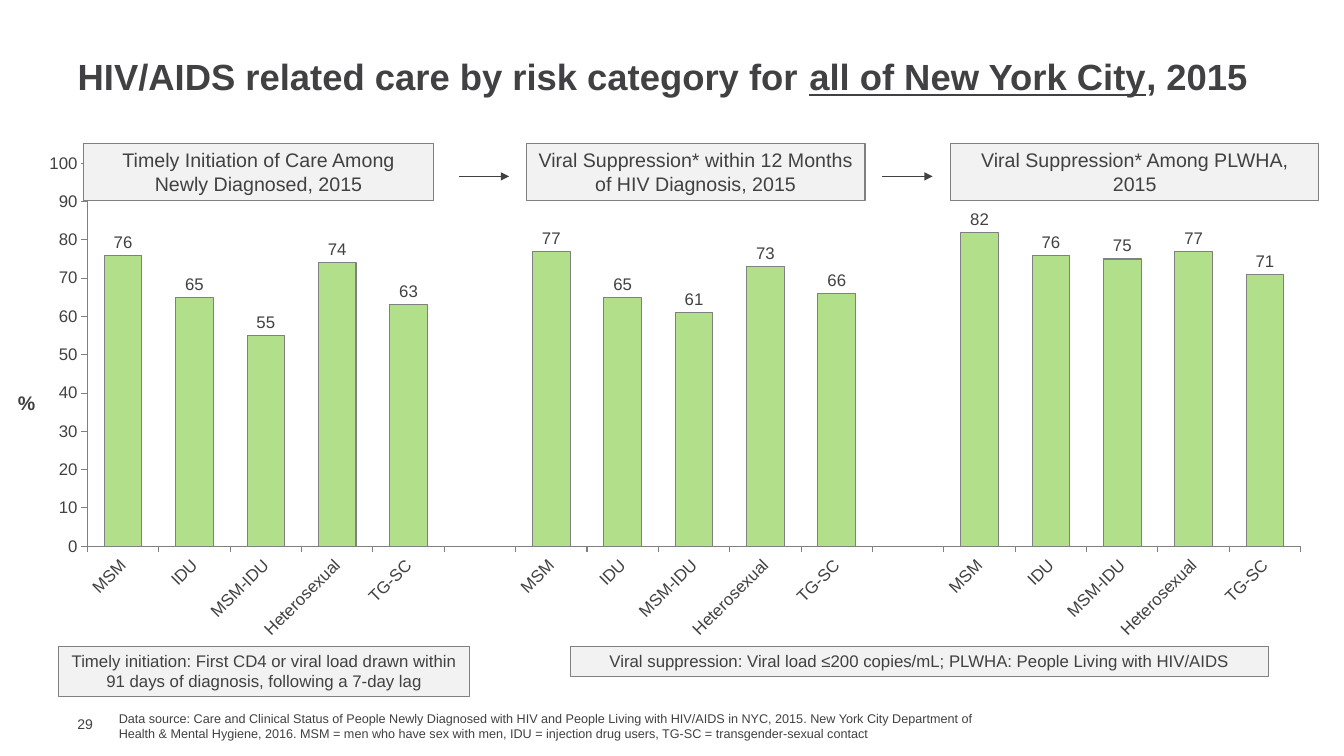
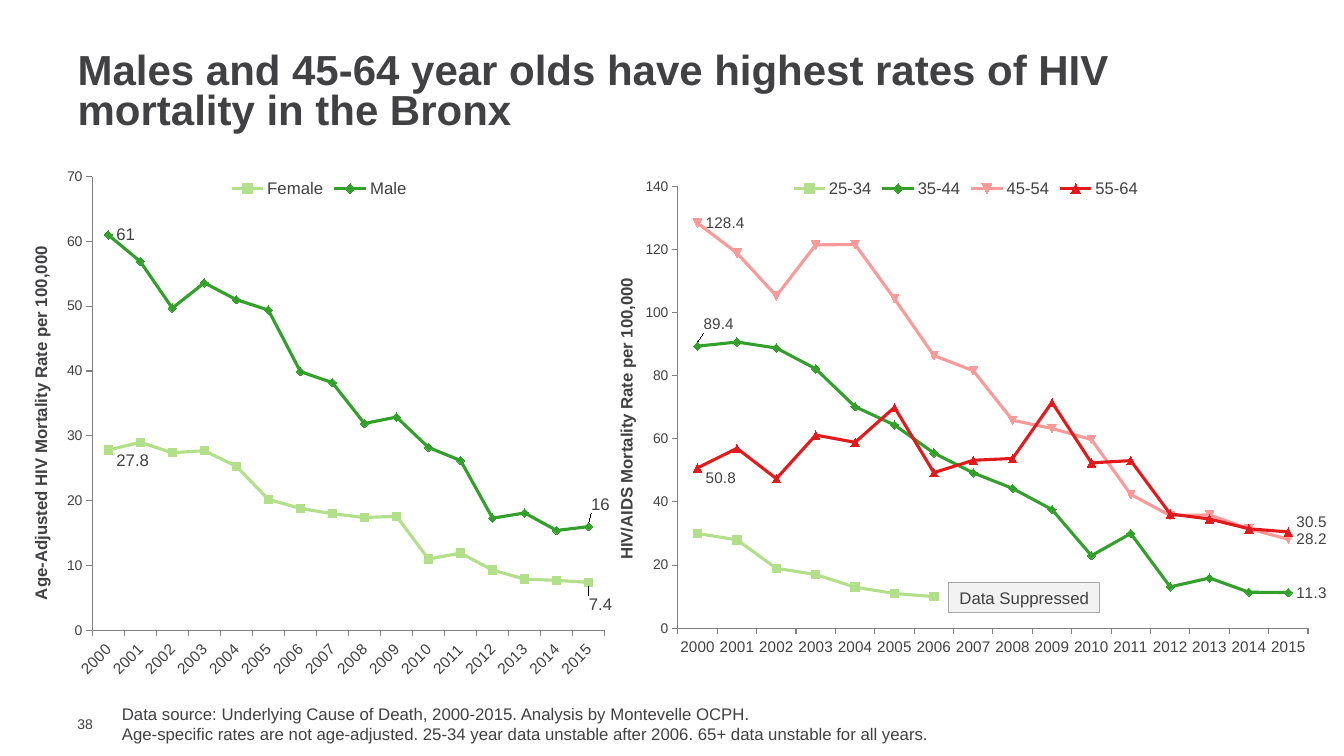
from lxml import etree
from pptx import Presentation, util as u
from pptx.chart.data import CategoryChartData
from pptx.dml.color import RGBColor
from pptx.enum import chart as ch, shapes, text
from pptx.oxml import ns

PX = 9144  # one px is 1/100 inch
FONT = "Arial"
HUES = {
    "ink": "414042", "panel": "F2F2F2", "edge": "808080", "soft": "A6A6A6",
    "lime": "B2DF8A", "green": "33A02C", "pink": "FB9A99", "red": "E31A1C",
}
POS = ch.XL_LABEL_POSITION
YEARS = [str(year) for year in range(2000, 2016)]
RISKS = ["MSM", "IDU", "MSM-IDU", "Heterosexual", "TG-SC"]


# Shared helpers
def px(*nums):
    return [u.Emu(num * PX) for num in nums]


def hue(name):
    return RGBColor.from_string(HUES[name])


def style(font, size, bold=False):
    font.name, font.size, font.bold = FONT, u.Pt(size), bold
    font.color.rgb = hue("ink")


def stroke(line, name, width=0.75):
    line.color.rgb = hue(name)
    line.width = u.Pt(width)


def write(frame, lines, size, align=text.PP_ALIGN.LEFT, bold=False):
    frame.word_wrap = True
    frame.auto_size = text.MSO_AUTO_SIZE.NONE
    for i, line in enumerate(lines):
        para = frame.paragraphs[0] if i == 0 else frame.add_paragraph()
        para.text = line
        para.alignment = align
        style(para.font, size, bold)


# Slide parts
def title(slide, area, size, parts):
    """Parts are (words, underlined) pairs."""
    head = slide.shapes.title
    head.left, head.top, head.width, head.height = px(*area)
    frame = head.text_frame
    write(frame, [""], size, bold=True)
    frame.vertical_anchor = text.MSO_ANCHOR.MIDDLE
    para = frame.paragraphs[0]
    para.line_spacing = 0.8
    for words, under in parts:
        run = para.add_run()
        run.text = words
        run.font.underline = under


def label(slide, area, lines, size, **kind):
    box = slide.shapes.add_textbox(*px(*area))
    write(box.text_frame, lines, size, **kind)
    return box.text_frame


def number(slide, num):
    frame = label(slide, (67, 710, 43, 17), [num], 10)
    frame.margin_top = frame.margin_right = frame.margin_bottom = 0
    frame.vertical_anchor = text.MSO_ANCHOR.MIDDLE


def panel(slide, area, words, size, edge="edge"):
    box = slide.shapes.add_shape(shapes.MSO_SHAPE.RECTANGLE, *px(*area))
    box.shadow.inherit = False
    box.fill.solid()
    box.fill.fore_color.rgb = hue("panel")
    stroke(box.line, edge)
    write(box.text_frame, [words], size, text.PP_ALIGN.CENTER)
    box.text_frame.vertical_anchor = text.MSO_ANCHOR.TOP


def arrow(slide, left, top, width):
    line = slide.shapes.add_connector(
        shapes.MSO_CONNECTOR.STRAIGHT, *px(left, top, left + width, top))
    stroke(line.line, "ink", 1)
    props = line._element.spPr
    tip = etree.SubElement(props.find(ns.qn("a:ln")), ns.qn("a:tailEnd"))
    tip.set("type", "triangle")
    etree.SubElement(props, ns.qn("a:effectLst"))


# Chart parts
def layout(x, y, w=None, h=None):
    """Place a plot by its inner area, or shift a label by x and y."""
    root = etree.Element(ns.qn("c:layout"))
    man = etree.SubElement(root, ns.qn("c:manualLayout"))
    rows = [("x", x), ("y", y)]
    if w is not None:
        rows = [("layoutTarget", "inner"), ("xMode", "edge"),
                ("yMode", "edge"), *rows, ("w", w), ("h", h)]
    for tag, val in rows:
        etree.SubElement(man, ns.qn("c:" + tag)).set("val", str(val))
    return root


def turn(body, deg):
    body.set("rot", str(deg * 60000))
    body.set("vert", "horz")


def axis(item, size):
    item.has_major_gridlines = False
    item.major_tick_mark = ch.XL_TICK_MARK.OUTSIDE
    item.minor_tick_mark = ch.XL_TICK_MARK.NONE
    stroke(item.format.line, "edge")
    style(item.tick_labels.font, size)


def graph(slide, kind, area, plot, cats, rows, top, step, sizes, tilt):
    data = CategoryChartData()
    data.categories = cats
    for name, vals in rows:
        data.add_series(name, vals)
    chart = slide.shapes.add_chart(kind, *px(*area), data).chart
    chart.has_title = chart.has_legend = False
    style(chart.font, sizes[0])
    chart.plots[0].vary_by_categories = False
    axis(chart.category_axis, sizes[0])
    axis(chart.value_axis, sizes[1])
    turn(chart.category_axis._element.txPr.find(ns.qn("a:bodyPr")), tilt)
    scale = chart.value_axis
    scale.minimum_scale, scale.maximum_scale = 0, top
    scale.major_unit = step
    field = chart._chartSpace.chart.plotArea
    for old in field.findall(ns.qn("c:layout")):
        field.remove(old)
    field.insert(0, layout(*plot))
    return chart


def bars(slide, vals):
    cats = RISKS + [""] + RISKS + [""] + RISKS
    chart = graph(slide, ch.XL_CHART_TYPE.COLUMN_CLUSTERED,
                  (22, 142, 1294, 500), (0.05, 0.04, 0.93, 0.76),
                  cats, [("Series 1", vals)], 100, 10, (12, 12), -45)
    plot = chart.plots[0]
    plot.gap_width = 90
    row = plot.series[0]
    row.invert_if_negative = False
    row.format.fill.solid()
    row.format.fill.fore_color.rgb = hue("lime")
    stroke(row.format.line, "edge")
    marks = row.data_labels
    marks.show_value = True
    marks.position = POS.OUTSIDE_END
    style(marks.font, 12)


def tag(row, spot, size, place, dx, dy):
    mark = row.points[spot].data_label
    style(mark.font, size)
    mark.position = place
    if dx or dy:
        node = mark._dLbl
        for old in node.findall(ns.qn("c:layout")):
            node.remove(old)
        node.insert(1, layout(dx, dy))


def lines(slide, area, plot, name, rows, top, step, tilt, size):
    """Rows are (name, colour, values, end labels)."""
    chart = graph(slide, ch.XL_CHART_TYPE.LINE_MARKERS, area, plot, YEARS,
                  [(row[0], row[2]) for row in rows],
                  top, step, (11, 10), tilt)
    chart.has_legend = True
    chart.legend.position = ch.XL_LEGEND_POSITION.TOP
    chart.legend.include_in_layout = False
    style(chart.legend.font, 12)
    frame = chart.value_axis.axis_title.text_frame
    frame.text = name
    style(frame.paragraphs[0].font, 12, True)
    turn(frame._txBody.find(ns.qn("a:bodyPr")), -90)
    for row, (_, tint, _, tags) in zip(chart.plots[0].series, rows):
        row.smooth = False
        stroke(row.format.line, tint, 2.25)
        row.marker.size = 6
        row.marker.format.fill.solid()
        row.marker.format.fill.fore_color.rgb = hue(tint)
        stroke(row.marker.format.line, tint)
        if tags:
            row.data_labels.show_value = False
        for spot, place, dx, dy in tags:
            tag(row, spot, size, place, dx, dy)


# Slides
def care(slide):
    title(slide, (67, 57, 1200, 45), 26, [
        ("HIV/AIDS related care by risk category for ", False),
        ("all of New York City", True), (", 2015", False)])
    number(slide, "29")
    bars(slide, [76, 65, 55, 74, 63, None, 77, 65, 61, 73, 66, None,
                 82, 76, 75, 77, 71])
    for left, width, words in [
        (83, 347, "Timely Initiation of Care Among Newly Diagnosed, 2015"),
        (522, 336,
         "Viral Suppression* within 12 Months of HIV Diagnosis, 2015"),
        (943, 365, "Viral Suppression* Among PLWHA, 2015"),
    ]:
        panel(slide, (left, 142, width, 57), words, 14)
    for left in (455, 875):
        arrow(slide, left, 175, 50)
    label(slide, (8, 383, 25, 33), ["%"], 14,
          align=text.PP_ALIGN.CENTER, bold=True)
    panel(slide, (566, 641, 692, 30),
          "Viral suppression: Viral load ≤200 copies/mL; "
          "PLWHA: People Living with HIV/AIDS", 12)
    panel(slide, (58, 641, 408, 50),
          "Timely initiation: First CD4 or viral load drawn within "
          "91 days of diagnosis, following a 7-day lag", 12)
    label(slide, (108, 700, 883, 40), [
        "Data source: Care and Clinical Status of People Newly Diagnosed "
        "with HIV and People Living with HIV/AIDS in NYC, 2015. New York "
        "City Department of Health & Mental Hygiene, 2016. MSM = men who "
        "have sex with men, IDU = injection drug users, "
        "TG-SC = transgender-sexual contact"], 9)


def deaths(slide):
    title(slide, (67, 47, 1200, 91), 30, [
        ("Males and 45-64 year olds have highest rates of HIV "
         "mortality in the Bronx", False)])
    number(slide, "38")
    lines(slide, (25, 167, 583, 510), (0.114, 0.016, 0.872, 0.883),
          "Age-Adjusted HIV Mortality Rate per 100,000", [
        ("Female", "lime",
         [27.8, 29, 27.4, 27.7, 25.3, 20.2, 18.8, 18, 17.4, 17.6, 11, 11.9,
          9.3, 7.9, 7.7, 7.4],
         [(0, POS.RIGHT, 0, 0.02), (15, POS.BELOW, 0.02, 0.01)]),
        ("Male", "green",
         [61, 56.9, 49.7, 53.6, 51, 49.4, 39.9, 38.2, 31.9, 32.9, 28.2, 26.2,
          17.3, 18.1, 15.4, 16],
         [(0, POS.RIGHT, 0, 0), (15, POS.ABOVE, 0.02, -0.01)]),
    ], 70, 10, -45, 12)
    lines(slide, (608, 167, 708, 487), (0.092, 0.037, 0.893, 0.9),
          "HIV/AIDS Mortality Rate per 100,000", [
        ("25-34", "lime", [30, 28, 19, 17, 13, 11, 10] + [None] * 9, []),
        ("35-44", "green",
         [89.4, 90.7, 88.8, 82.2, 70.2, 64.4, 55.5, 49.2, 44.3, 37.6, 23, 30,
          13.1, 15.9, 11.4, 11.3],
         [(0, POS.ABOVE, 0.03, -0.01), (15, POS.RIGHT, 0, 0)]),
        ("45-54", "pink",
         [128.4, 118.9, 105.3, 121.5, 121.6, 104.4, 86.4, 81.6, 65.9, 63.3,
          59.8, 42.4, 35.7, 35.9, 31.5, 28.2],
         [(0, POS.RIGHT, 0, 0), (15, POS.RIGHT, 0, 0)]),
        ("55-64", "red",
         [50.8, 57, 47.4, 61.2, 58.9, 70, 49.3, 53.2, 53.8, 71.6, 52.4, 53.1,
          36.2, 34.6, 31.5, 30.5],
         [(0, POS.RIGHT, 0, 0.02), (15, POS.RIGHT, 0, -0.02)]),
    ], 140, 20, 0, 11)
    panel(slide, (941, 578, 150, 30), "Data Suppressed", 12, "soft")
    label(slide, (111, 693, 971, 50), [
        "Data source: Underlying Cause of Death, 2000-2015. "
        "Analysis by Montevelle OCPH.",
        "Age-specific rates are not age-adjusted. 25-34 year data unstable "
        "after 2006. 65+ data unstable for all years."], 12)


def main():
    deck = Presentation()
    deck.slide_width, deck.slide_height = px(1333, 750)
    for build in (care, deaths):
        build(deck.slides.add_slide(deck.slide_layouts[5]))
    deck.save("out.pptx")


if __name__ == "__main__":
    main()
